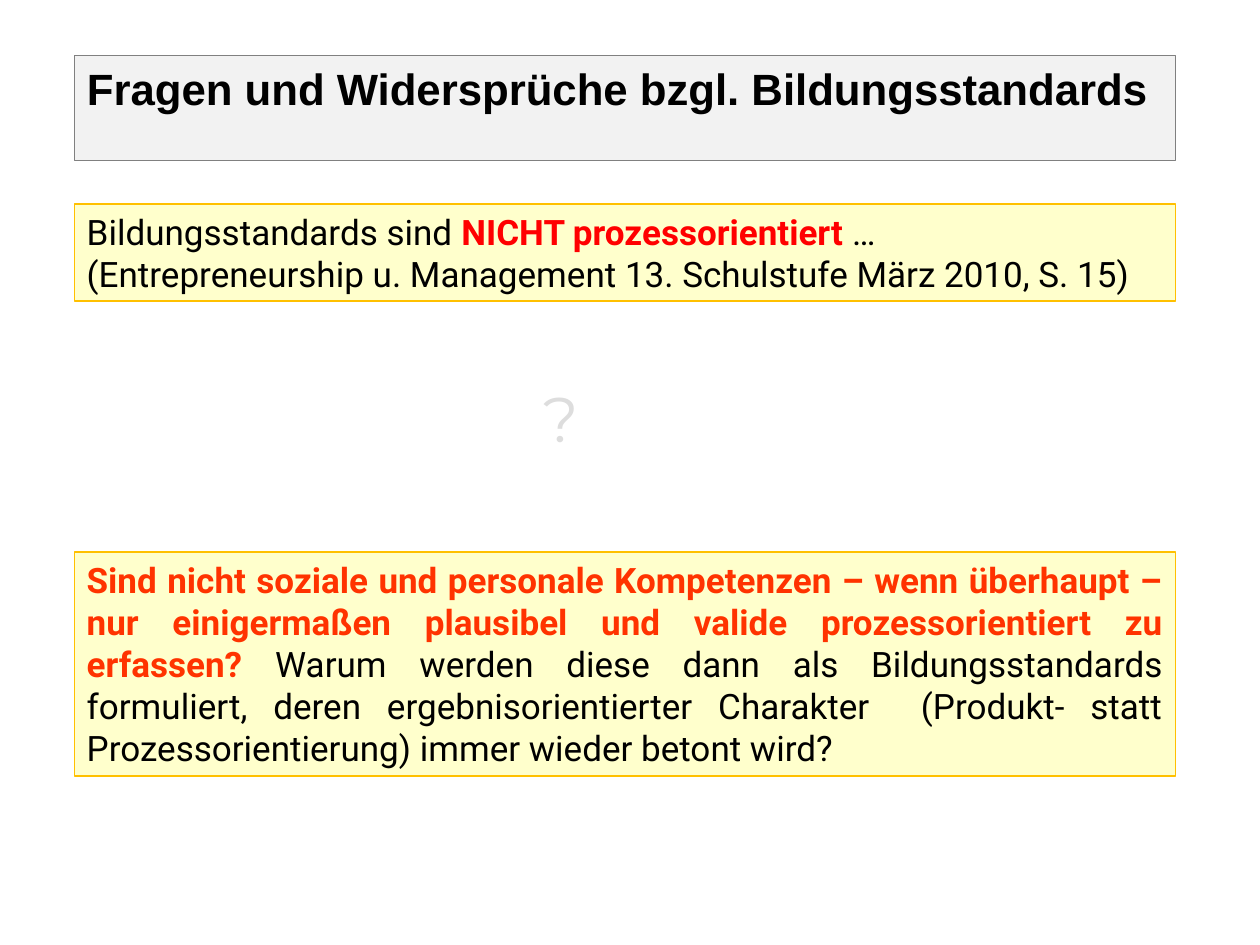
from dataclasses import dataclass

from lxml.etree import SubElement
from pptx import Presentation
from pptx.dml.color import RGBColor
from pptx.enum.shapes import MSO_SHAPE
from pptx.enum.text import MSO_ANCHOR, MSO_AUTO_SIZE, PP_ALIGN
from pptx.oxml.ns import qn
from pptx.util import Inches, Pt


@dataclass(frozen=True)
class Theme:
    """Colours, fonts, type sizes and shared measures."""
    ink: str = "000000"
    alert: str = "FF0000"
    challenge: str = "FF3300"
    faint: str = "DDDDDD"
    title_fill: str = "F2F2F2"
    title_line: str = "808080"
    panel_fill: str = "FFFFCC"
    panel_line: str = "FFC000"
    title_font: str = "Arial"
    body_font: str = "Roboto"
    mark_font: str = "Montserrat"
    title_size: float = 25
    body_size: float = 20
    mark_size: float = 36
    line_width: float = 0.75
    left: float = 0.59
    width: float = 8.74


class SlideBuilder:
    """Places styled elements on one slide."""

    def __init__(self, slide, theme):
        self.slide = slide
        self.theme = theme

    def styled_run(self, paragraph, text, font, size, color, bold=False):
        """Add one formatted run and return it."""
        run = paragraph.add_run()
        run.text = text
        run.font.name = font
        run.font.size = Pt(size)
        run.font.bold = bold
        run.font.color.rgb = RGBColor.from_string(color)
        return run

    def frame(self, shape, fill, line):
        """Give a box its fill, border and text behaviour."""
        shape.fill.solid()
        shape.fill.fore_color.rgb = RGBColor.from_string(fill)
        shape.line.color.rgb = RGBColor.from_string(line)
        shape.line.width = Pt(self.theme.line_width)
        body = shape.text_frame
        body.word_wrap = True
        body.auto_size = MSO_AUTO_SIZE.SHAPE_TO_FIT_TEXT
        body.vertical_anchor = MSO_ANCHOR.TOP
        return body

    def title(self, text, top, height):
        """Fill and place the title placeholder."""
        theme = self.theme
        heading = self.slide.shapes.title
        heading.left, heading.top = Inches(theme.left), Inches(top)
        heading.width, heading.height = Inches(theme.width), Inches(height)
        body = self.frame(heading, theme.title_fill, theme.title_line)
        body.paragraphs[0].alignment = PP_ALIGN.LEFT
        self.styled_run(body.paragraphs[0], text, theme.title_font,
                        theme.title_size, theme.ink, True)

    def panel(self, top, height, paragraphs, alignment=PP_ALIGN.LEFT):
        """Add a panel of paragraphs made of (text, colour, bold) runs."""
        theme = self.theme
        panel = self.slide.shapes.add_shape(
            MSO_SHAPE.RECTANGLE, Inches(theme.left), Inches(top),
            Inches(theme.width), Inches(height))
        panel.shadow.inherit = False
        body = self.frame(panel, theme.panel_fill, theme.panel_line)
        for index, runs in enumerate(paragraphs):
            paragraph = body.add_paragraph() if index else body.paragraphs[0]
            paragraph.alignment = alignment
            for text, color, bold in runs:
                self.styled_run(paragraph, text, theme.body_font,
                                theme.body_size, color, bold)

    def outlined_mark(self, text, left, top, width, height):
        """Add a large character with a coloured outline."""
        theme = self.theme
        mark = self.slide.shapes.add_textbox(
            Inches(left), Inches(top), Inches(width), Inches(height))
        mark.text_frame.word_wrap = False
        run = self.styled_run(mark.text_frame.paragraphs[0], text,
                              theme.mark_font, theme.mark_size, theme.faint)
        properties = run._r.get_or_add_rPr()
        outline = SubElement(properties, qn("a:ln"), w=str(Pt(theme.line_width)))
        fill = SubElement(outline, qn("a:solidFill"))
        SubElement(fill, qn("a:srgbClr"), val=theme.alert)
        properties.insert(0, outline)


def main():
    """Build and save the slide."""
    theme = Theme()
    deck = Presentation()
    deck.slide_width, deck.slide_height = Inches(10), Inches(7.5)
    builder = SlideBuilder(deck.slides.add_slide(deck.slide_layouts[5]), theme)

    builder.title("Fragen und Widersprüche bzgl. Bildungsstandards", 0.44, 0.52)
    builder.outlined_mark("?", 4.21, 2.96, 1.42, 1.26)
    builder.panel(1.62, 0.77, [
        [("Bildungsstandards sind ", theme.ink, False),
         ("NICHT prozessorientiert ", theme.alert, True),
         ("…", theme.ink, False)],
        [("(Entrepreneurship u. Management 13. Schulstufe März 2010, S. 15)",
          theme.ink, False)],
    ])
    builder.panel(4.38, 1.78, [
        [("Sind nicht soziale und personale Kompetenzen – wenn überhaupt – "
          "nur einigermaßen plausibel und valide prozessorientiert zu "
          "erfassen?", theme.challenge, True),
         (" Warum werden diese dann als Bildungsstandards formuliert, deren "
          "ergebnisorientierter Charakter  (Produkt- statt "
          "Prozessorientierung) immer wieder betont wird?", theme.ink, False)],
    ], PP_ALIGN.JUSTIFY)
    deck.save("out.pptx")


if __name__ == "__main__":
    main()
